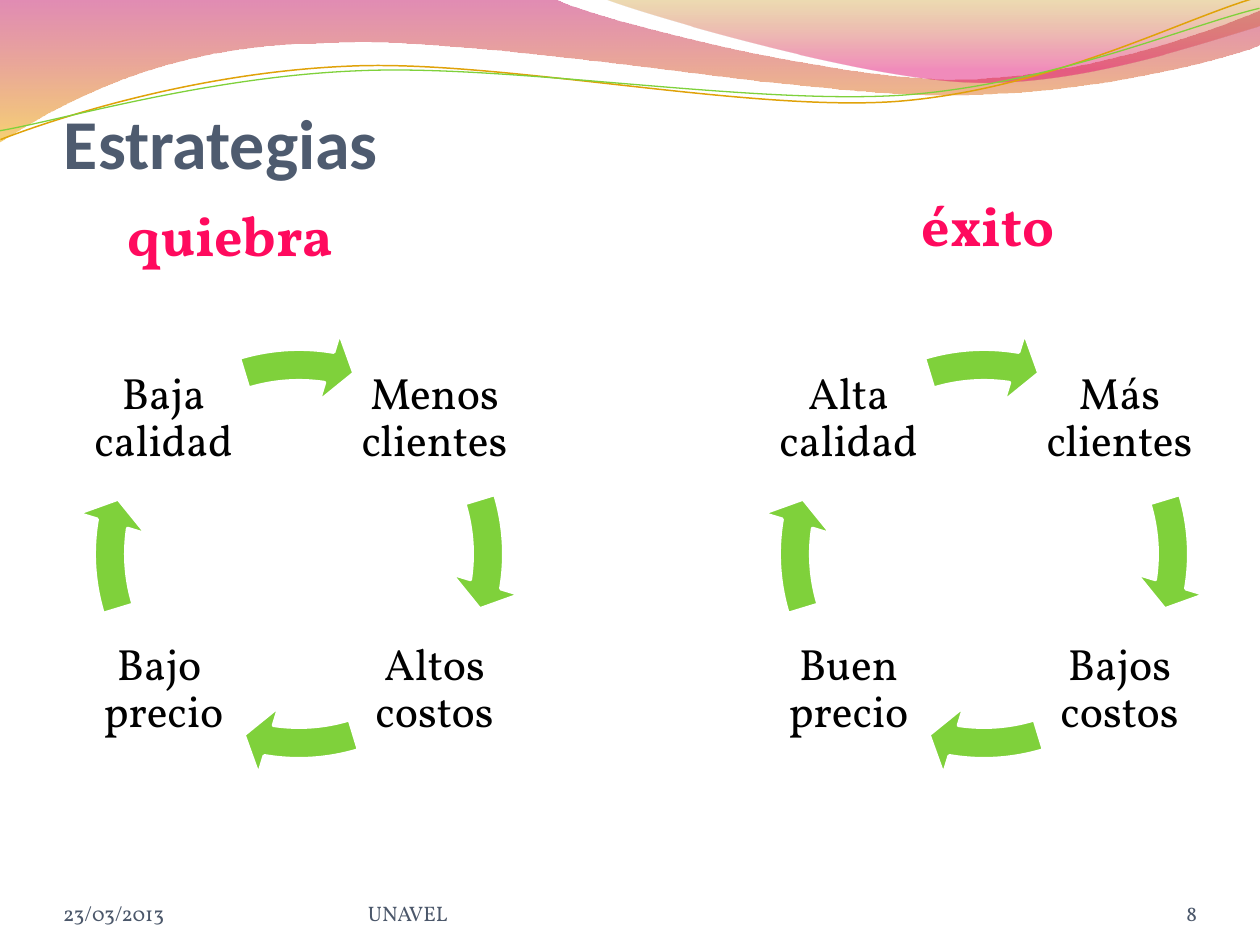
from dataclasses import dataclass

from lxml.etree import SubElement
from pptx import Presentation
from pptx.dml.color import RGBColor
from pptx.enum.shapes import MSO_SHAPE
from pptx.enum.text import MSO_ANCHOR, PP_ALIGN
from pptx.oxml.ns import qn
from pptx.util import Emu, Pt

PIXELS_PER_INCH = 126
WAVE_ROTATION = 357.3
GREEN = "7FD13B"
PINK = "FF0A5E"
FOOTER_GREY = "4B576A"

Point = tuple[int, int]


@dataclass
class Wave:
    """Each segment holds one point (line) or three (Bézier curve)."""
    start: Point
    segments: list[tuple[Point, ...]]


@dataclass
class Stop:
    percent: int
    color: str
    opacity: int


@dataclass
class Cycle:
    left: int
    steps: list[str]  # clockwise from the top left


UPPER_BAND = Wave((0, -1), [
    ((554, -1),),
    ((600, 21), (837, 79), (955, 79)),
    ((1075, 79), (1207, 33), (1260, 11)),
    ((1261, 45),),
    ((1238, 55), (1096, 96), (940, 95)),
    ((784, 94), (481, 35), (324, 43)),
    ((163, 44), (58, 105), (-1, 142)),
])
RIGHT_BAND = Wave((604, -1), [
    ((641, 14), (859, 78), (969, 82)),
    ((1079, 87), (1211, 40), (1260, 26)),
    ((1260, 0),),
])
ORANGE_WAVE = Wave((-2, 110), [
    ((58, 90), (199, 52), (350, 53)),
    ((499, 53), (745, 118), (896, 114)),
    ((1049, 109), (1184, 45), (1260, 27)),
])
GREEN_WAVE = Wave((-2, 101), [
    ((57, 94), (207, 57), (357, 58)),
    ((509, 58), (750, 111), (902, 108)),
    ((1052, 104), (1188, 52), (1262, 38)),
])
CYCLES = [
    Cycle(74, ["Baja calidad", "Menos clientes", "Altos costos", "Bajo  precio"]),
    Cycle(759, ["Alta calidad", "Más clientes", "Bajos costos", "Buen precio"]),
]


def px(length: float) -> Emu:
    return Emu(round(length * 914400 / PIXELS_PER_INCH))


def rgb(color: str) -> RGBColor:
    return RGBColor.from_string(color)


def add_text(slide, text: str, left: int, top: int, width: int, height: int, *,
             size: int, color: str = "000000", font: str = "Vollkorn",
             bold: bool = False, align=PP_ALIGN.LEFT, anchor=MSO_ANCHOR.BOTTOM,
             insets: tuple = (0, 0, 0, 0), wrap: bool = True,
             line_spacing: float = 1.0):
    shape = slide.shapes.add_textbox(px(left), px(top), px(width), px(height))
    frame = shape.text_frame
    frame.word_wrap = wrap
    frame.vertical_anchor = anchor
    (frame.margin_left, frame.margin_top,
     frame.margin_right, frame.margin_bottom) = map(px, insets)
    paragraph = frame.paragraphs[0]
    paragraph.alignment = align
    paragraph.line_spacing = line_spacing
    run = paragraph.add_run()
    run.text = text
    run.font.name = font
    run.font.size = Pt(size)
    run.font.bold = bold
    run.font.color.rgb = rgb(color)
    return shape


def add_wave(slide, wave: Wave, *, closed: bool):
    points = [point for segment in wave.segments for point in segment]
    builder = slide.shapes.build_freeform(*map(px, wave.start))
    builder.add_line_segments([(px(x), px(y)) for x, y in points], close=closed)
    shape = builder.convert_to_shape()
    shape.shadow.inherit = False
    # Merge every three lines of a curved segment into one Bézier curve
    lines = iter(list(shape._element.iter(qn("a:lnTo"))))
    for segment in wave.segments:
        first, *others = [next(lines) for _ in segment]
        if others:
            curve = first.makeelement(qn("a:cubicBezTo"))
            first.addprevious(curve)
            for line in (first, *others):
                curve.append(line[0])
                line.getparent().remove(line)
    return shape


def add_band(slide, wave: Wave, stops: list[Stop]) -> None:
    shape = add_wave(slide, wave, closed=True)
    shape.line.fill.background()
    shape.fill.gradient()
    gradient = shape._element.spPr.find(qn("a:gradFill"))
    for child in list(gradient):
        gradient.remove(child)
    stop_list = SubElement(gradient, qn("a:gsLst"))
    for stop in stops:
        entry = SubElement(stop_list, qn("a:gs"), pos=str(stop.percent * 1000))
        color = SubElement(entry, qn("a:srgbClr"), val=stop.color)
        SubElement(color, qn("a:alpha"), val=str(stop.opacity * 1000))
    SubElement(gradient, qn("a:lin"), ang="5400000", scaled="0")


def add_wave_line(slide, wave: Wave, color: str, width: float) -> None:
    shape = add_wave(slide, wave, closed=False)
    shape.rotation = WAVE_ROTATION
    shape.fill.background()
    shape.line.color.rgb = rgb(color)
    shape.line.width = Pt(width)


def add_cycle(slide, cycle: Cycle) -> None:
    quarter_turn, full_turn = 54, 216  # adjustment units: 60000ths of a degree / 100000
    step_cells = [(0, 0), (1, 0), (1, 1), (0, 1)]
    for index, (step, (column, row)) in enumerate(zip(cycle.steps, step_cells)):
        add_text(slide, step, cycle.left + 10 + 271 * column, 339 + 271 * row, 159, 159,
                 size=25, align=PP_ALIGN.CENTER, anchor=MSO_ANCHOR.MIDDLE,
                 insets=(4, 4, 4, 4), line_spacing=0.9)
        arrow = slide.shapes.add_shape(MSO_SHAPE.CIRCULAR_ARROW, px(cycle.left),
                                       px(329), px(450), px(450))
        turn = quarter_turn * index
        values = (0.07, 4.65, 5.5 + turn, (205.85 + turn) % full_turn, 0.08)
        for position, value in enumerate(values):
            arrow.adjustments[position] = value
        arrow.shadow.inherit = False
        arrow.fill.solid()
        arrow.fill.fore_color.rgb = rgb(GREEN)
        arrow.line.color.rgb = rgb("FFFFFF")
        arrow.line.width = Pt(2)


def main() -> None:
    presentation = Presentation()
    presentation.slide_width, presentation.slide_height = px(1260), px(945)
    slide = presentation.slides.add_slide(presentation.slide_layouts[6])

    # Decorative waves
    add_band(slide, UPPER_BAND, [Stop(0, "BD0059", 45), Stop(100, "F0AB00", 55)])
    add_band(slide, RIGHT_BAND, [Stop(0, "C38B00", 30), Stop(80, "E1006B", 45)])
    add_wave_line(slide, ORANGE_WAVE, "E0A209", 0.85)
    add_wave_line(slide, GREEN_WAVE, GREEN, 0.75)

    # Title and cycle headings
    add_text(slide, "Estrategias", 64, 25, 1134, 158, size=40, color="4E5B6F",
             font="Calibri", bold=True, insets=(0, 6, 0, 0))
    for heading, left, top, width in [("quiebra", 114, 194, 233), ("éxito", 908, 185, 160)]:
        add_text(slide, heading, left, top, width, 81, size=32, color=PINK, bold=True,
                 align=PP_ALIGN.CENTER, anchor=MSO_ANCHOR.TOP,
                 insets=(13, 6, 13, 6), wrap=False)

    # Cycles
    for cycle in CYCLES:
        add_cycle(slide, cycle)

    # Footer
    for text, left, width, align in [("23/03/2013", 63, 294, PP_ALIGN.LEFT),
                                     ("UNAVEL", 368, 462, PP_ALIGN.LEFT),
                                     ("8", 1092, 105, PP_ALIGN.RIGHT)]:
        add_text(slide, text, left, 876, width, 50, size=12, color=FOOTER_GREY, align=align)

    presentation.save("out.pptx")


if __name__ == "__main__":
    main()
